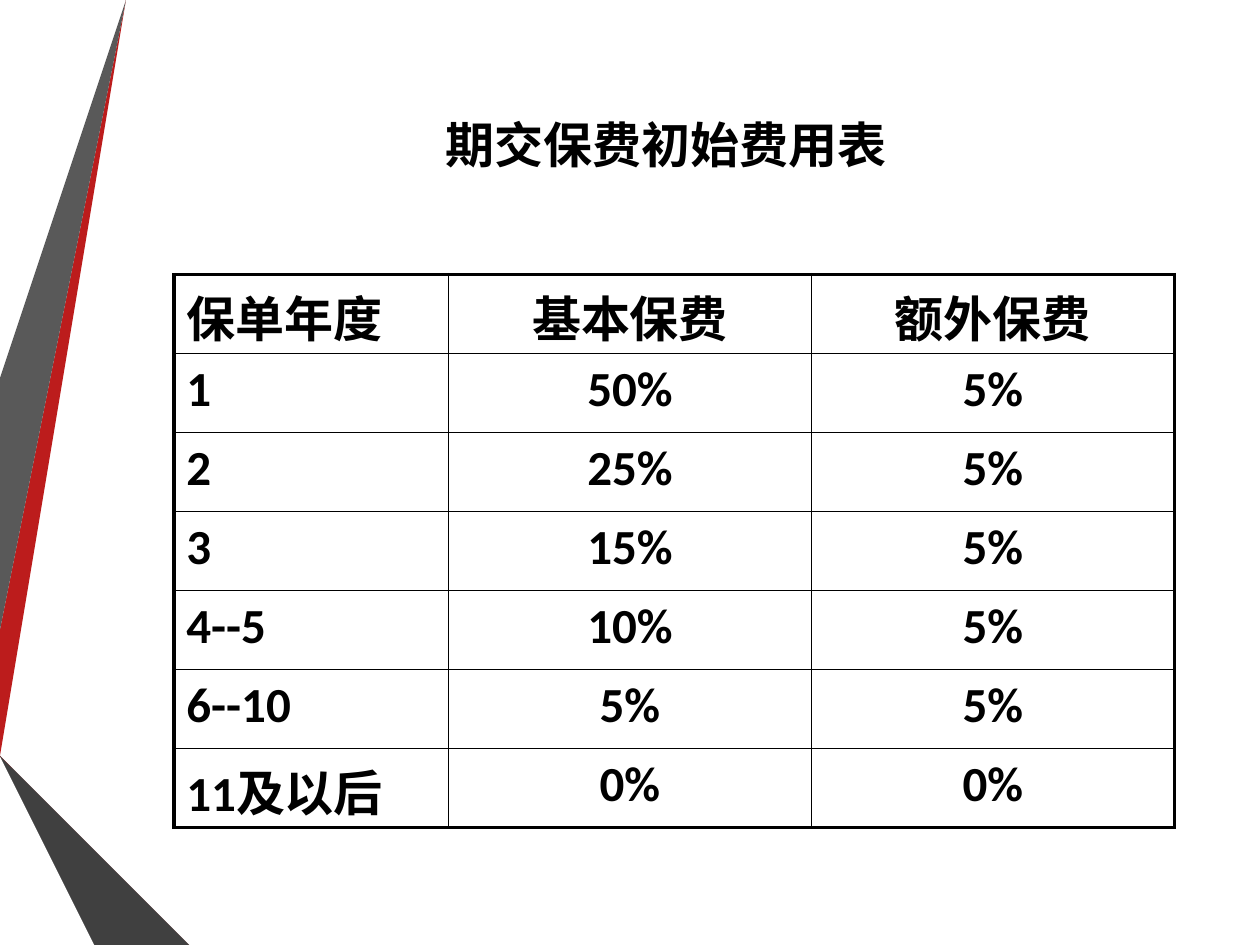
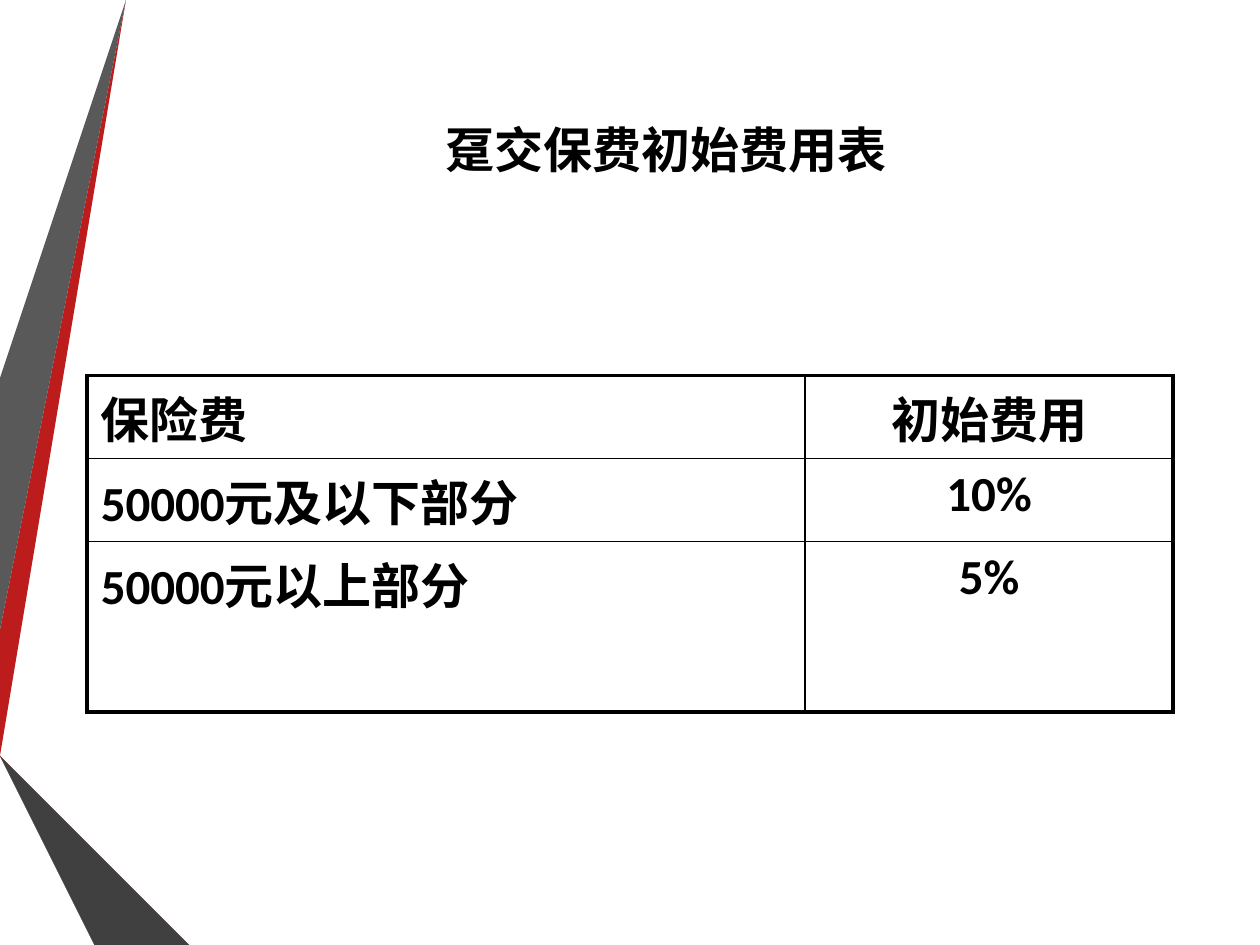
from typing import NamedTuple

from lxml import etree
from pptx import Presentation
from pptx.dml.color import RGBColor
from pptx.enum.lang import MSO_LANGUAGE_ID
from pptx.enum.text import MSO_ANCHOR, PP_ALIGN
from pptx.oxml.ns import qn
from pptx.util import Inches, Pt

LEFT, CENTER = PP_ALIGN.LEFT, PP_ALIGN.CENTER
MIDDLE = MSO_ANCHOR.MIDDLE
CHINESE = MSO_LANGUAGE_ID.SIMPLIFIED_CHINESE

BLACK = "000000"
OUTER_LINE, INNER_LINE = 2.25, 1
TEXT_FORMAT = {"name": "Calibri", "size": Pt(28), "bold": True, "language_id": CHINESE}


class Band(NamedTuple):
    color: str
    points: list[tuple[float, float]]


class FeeSlide(NamedTuple):
    title: str
    title_height: float
    left: float
    top: float
    col_widths: list[float]
    row_heights: list[float]
    side_margin: float
    rows: list[list[str]]


BANDS = [
    Band("BC1C1C", [(0, 5.44), (0, 5.75), (0.22, 5.79), (1.17, 0), (0.89, 0)]),
    Band("595959", [(0.83, 0), (0.55, 0), (0, 3.36), (0, 5.06)]),
    Band("262626", [(0, 6.19), (0, 6.21), (0.93, 7.5), (0.99, 7.5)]),
    Band("5E0E0E", [(0, 5.79), (0, 5.8), (1.56, 7.5), (1.63, 7.5)]),
    Band("8D1515", [(0, 5.79), (1.63, 7.5), (2.33, 7.5), (0.22, 5.79), (0, 5.75)]),
    Band("404040", [(0, 6.19), (0.99, 7.5), (1.51, 7.5), (0, 5.86)]),
]

FEE_SLIDES = [
    FeeSlide(
        "期交保费初始费用表", 1.28, 1.38, 2.18, [2.18, 2.88, 2.88], [4.39 / 7] * 7, 0.1,
        [
            ["保单年度", "基本保费", "额外保费"],
            ["1", "50%", "5%"],
            ["2", "25%", "5%"],
            ["3", "15%", "5%"],
            ["4--5", "10%", "5%"],
            ["6--10", "5%", "5%"],
            ["11及以后", "0%", "0%"],
        ],
    ),
    FeeSlide(
        "趸交保费初始费用表", 1.36, 0.69, 2.98, [5.7, 2.92], [0.66, 0.66, 1.35], 0.11,
        [
            ["保险费", "初始费用"],
            ["50000元及以下部分", "10%"],
            ["50000元以上部分", "5%"],
        ],
    ),
]


def rgb(color: str) -> RGBColor:
    return RGBColor.from_string(color)


def write(tf, text: str, align) -> None:
    p = tf.paragraphs[0]
    p.alignment = align
    r = p.add_run()
    r.text = text
    for name, value in TEXT_FORMAT.items():
        setattr(r.font, name, value)
    r.font.color.rgb = rgb(BLACK)


def add_band(s, band: Band) -> None:
    start, *others = band.points
    builder = s.shapes.build_freeform(*start, scale=Inches(1))
    builder.add_line_segments(others, close=True)
    sp = builder.convert_to_shape()
    sp.shadow.inherit = False
    sp.fill.solid()
    sp.fill.fore_color.rgb = rgb(band.color)
    sp.line.fill.background()


def add_title(s, text: str, height: float) -> None:
    sp = s.shapes.add_textbox(Inches(1.07), Inches(0.5), Inches(8.43), Inches(height))
    tf = sp.text_frame
    tf.word_wrap = True
    tf.vertical_anchor = MIDDLE
    write(tf, text, CENTER)


def set_borders(cell, is_outer: dict[str, bool]) -> None:
    """Draw the cell's sides, thick where a side lies on the table's edge."""
    tc_pr = cell._tc.get_or_add_tcPr()
    for i, (side, outer) in enumerate(is_outer.items()):
        width = Pt(OUTER_LINE if outer else INNER_LINE)
        ln = etree.Element(qn(f"a:ln{side}"), w=str(width))
        fill = etree.SubElement(ln, qn("a:solidFill"))
        etree.SubElement(fill, qn("a:srgbClr"), val=BLACK)
        tc_pr.insert(i, ln)


def add_fee_table(s, fee: FeeSlide) -> None:
    n_rows, n_cols = len(fee.rows), len(fee.col_widths)
    table = s.shapes.add_table(
        n_rows, n_cols, Inches(fee.left), Inches(fee.top),
        Inches(sum(fee.col_widths)), Inches(sum(fee.row_heights)),
    ).table
    table.first_row = table.horz_banding = False
    for col, width in zip(table.columns, fee.col_widths):
        col.width = Inches(width)
    for row, height in zip(table.rows, fee.row_heights):
        row.height = Inches(height)
    for i, texts in enumerate(fee.rows):
        for j, text in enumerate(texts):
            cell = table.cell(i, j)
            cell.margin_left = cell.margin_right = Inches(fee.side_margin)
            cell.margin_top = cell.margin_bottom = Inches(0.05)
            cell.fill.background()
            write(cell.text_frame, text, CENTER if j else LEFT)
            set_borders(cell, {
                "L": j == 0, "R": j == n_cols - 1,
                "T": i == 0, "B": i == n_rows - 1,
            })


def main() -> None:
    prs = Presentation()
    prs.slide_width, prs.slide_height = Inches(10), Inches(7.5)
    for fee in FEE_SLIDES:
        s = prs.slides.add_slide(prs.slide_layouts[6])
        for band in BANDS:
            add_band(s, band)
        add_title(s, fee.title, fee.title_height)
        add_fee_table(s, fee)
    prs.save("out.pptx")


if __name__ == "__main__":
    main()
